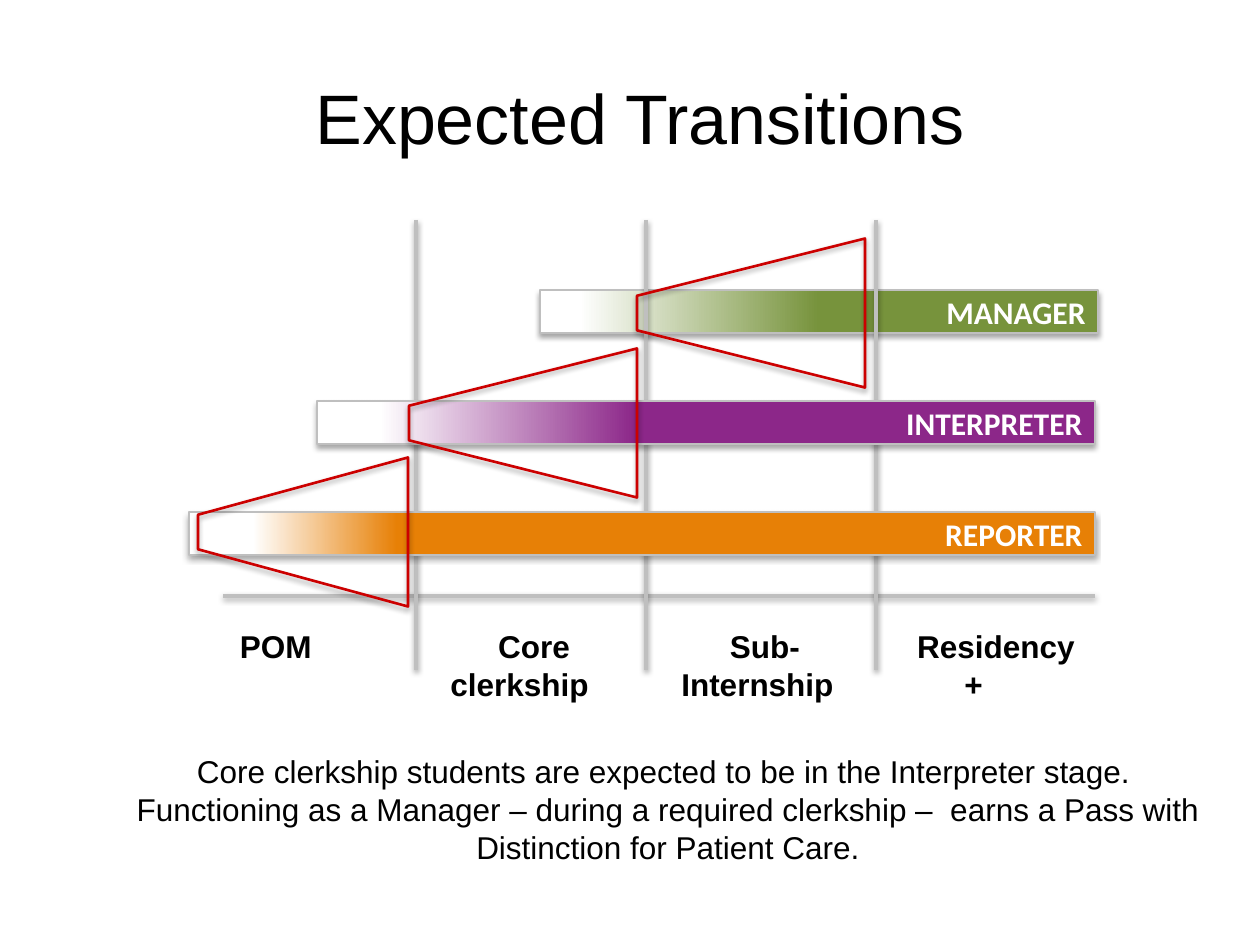
from lxml.etree import SubElement
from pptx import Presentation
from pptx.dml.color import RGBColor
from pptx.enum.shapes import MSO_CONNECTOR, MSO_SHAPE
from pptx.enum.text import MSO_ANCHOR, MSO_AUTO_SIZE, PP_ALIGN
from pptx.oxml.ns import qn
from pptx.util import Emu, Pt

PX_PER_INCH = 126
BLACK = RGBColor(0x00, 0x00, 0x00)
WHITE = RGBColor(0xFF, 0xFF, 0xFF)
GRAY = RGBColor(0xBF, 0xBF, 0xBF)
RED = RGBColor(0xCC, 0x00, 0x00)
GREEN = RGBColor(0x77, 0x93, 0x3C)
PURPLE = RGBColor(0x8C, 0x27, 0x89)
ORANGE = RGBColor(0xE7, 0x80, 0x06)


def px(*lengths):
    return [Emu(round(n * 914400 / PX_PER_INCH)) for n in lengths]


def drop_shadow(shape, blur, dist, opacity):
    """Cast a soft black shadow straight down; opacity in percent."""
    effects = SubElement(shape._element.spPr, qn("a:effectLst"))
    shadow = SubElement(effects, qn("a:outerShdw"), blurRad=str(Pt(blur)),
                        dist=str(Pt(dist)), dir="5400000", rotWithShape="0")
    color = SubElement(shadow, qn("a:srgbClr"), val="000000")
    SubElement(color, qn("a:alpha"), val=str(opacity * 1000))


class Deck:
    """Holds the text style and the slide being built."""
    font, size = "Arial", 18

    def __init__(self, width, height):
        self.prs = Presentation()
        self.prs.slide_width, self.prs.slide_height = px(width, height)
        self.slide = self.prs.slides.add_slide(self.prs.slide_layouts[5])

    def set_text(self, sp, text, align=PP_ALIGN.CENTER, font=font, size=size,
                 color=BLACK, bold=False):
        tf = sp.text_frame
        tf.word_wrap = True
        p = tf.paragraphs[0]
        p.text = text
        p.alignment = align
        for r in p.runs:
            r.font.name, r.font.size, r.font.bold = font, Pt(size), bold
            r.font.color.rgb = color

    def title(self, text, x, y, w, h):
        sp = self.slide.shapes.title
        sp.left, sp.top, sp.width, sp.height = px(x, y, w, h)
        self.set_text(sp, text, size=40)
        sp.text_frame.vertical_anchor = MSO_ANCHOR.MIDDLE

    def text(self, text, x, y, w, h, bold=False):
        sp = self.slide.shapes.add_textbox(*px(x, y, w, h))
        self.set_text(sp, text, bold=bold)
        sp.text_frame.auto_size = MSO_AUTO_SIZE.SHAPE_TO_FIT_TEXT

    def line(self, x1, y1, x2, y2):
        line = self.slide.shapes.add_connector(
            MSO_CONNECTOR.STRAIGHT, *px(x1, y1, x2, y2))
        line.line.color.rgb, line.line.width = GRAY, Pt(2)
        drop_shadow(line, 3.1, 1.6, 38)

    def bar(self, text, x, y, w, h, color, start, end):
        """Bar that fades from white to color between two fractions of its width."""
        sp = self.slide.shapes.add_shape(MSO_SHAPE.RECTANGLE, *px(x, y, w, h))
        sp.fill.gradient()
        sp.fill.gradient_angle = 0
        for stop, at, rgb in zip(sp.fill.gradient_stops, (start, end), (WHITE, color)):
            stop.position, stop.color.rgb = at, rgb
        sp.line.color.rgb, sp.line.width = GRAY, Pt(0.75)
        drop_shadow(sp, 3.1, 1.8, 35)
        self.set_text(sp, text, PP_ALIGN.RIGHT, "Calibri", color=WHITE, bold=True)
        sp.text_frame.vertical_anchor = MSO_ANCHOR.MIDDLE

    def funnel(self, left, middle, length, spread):
        """Trapezoid on its side that widens to the right around the middle height."""
        x = left + (length - spread) / 2
        y = middle - length / 2
        sp = self.slide.shapes.add_shape(MSO_SHAPE.TRAPEZOID, *px(x, y, spread, length))
        sp.rotation = 270
        sp.adjustments[0] = 0.384
        sp.fill.background()
        sp.line.color.rgb, sp.line.width = RED, Pt(1.5)
        drop_shadow(sp, 3.1, 1.8, 35)


def main():
    deck = Deck(1260, 945)
    deck.title("Expected Transitions", 73, 38, 1134, 158)

    deck.bar("MANAGER", 540, 290, 558, 43, GREEN, 0.07, 0.5)
    deck.line(223, 596, 1095, 596)
    for i in range(3):
        x = 416 + 230 * i
        deck.line(x, 220, x, 670)

    stages = (("POM", 50), ("Core clerkship", 127),
              ("Sub-Internship", 127), ("Residency +", 89))
    for i, (stage, height) in enumerate(stages):
        deck.text(stage + "\t", 207 + 231 * i, 621, 192, height, bold=True)

    deck.bar("INTERPRETER", 317, 401, 778, 43, PURPLE, 0.08, 0.41)
    deck.bar("REPORTER", 189, 512, 906, 43, ORANGE, 0.07, 0.23)
    for left, middle, length in ((637, 313, 228), (409, 423, 228), (198, 532, 210)):
        deck.funnel(left, middle, length, 149)

    deck.text("Core clerkship students are expected to be in the Interpreter stage.  "
              "Functioning as a Manager – during a required clerkship –  earns a Pass "
              "with Distinction for Patient Care.", 116, 746, 1104, 127)
    deck.prs.save("out.pptx")


if __name__ == "__main__":
    main()
